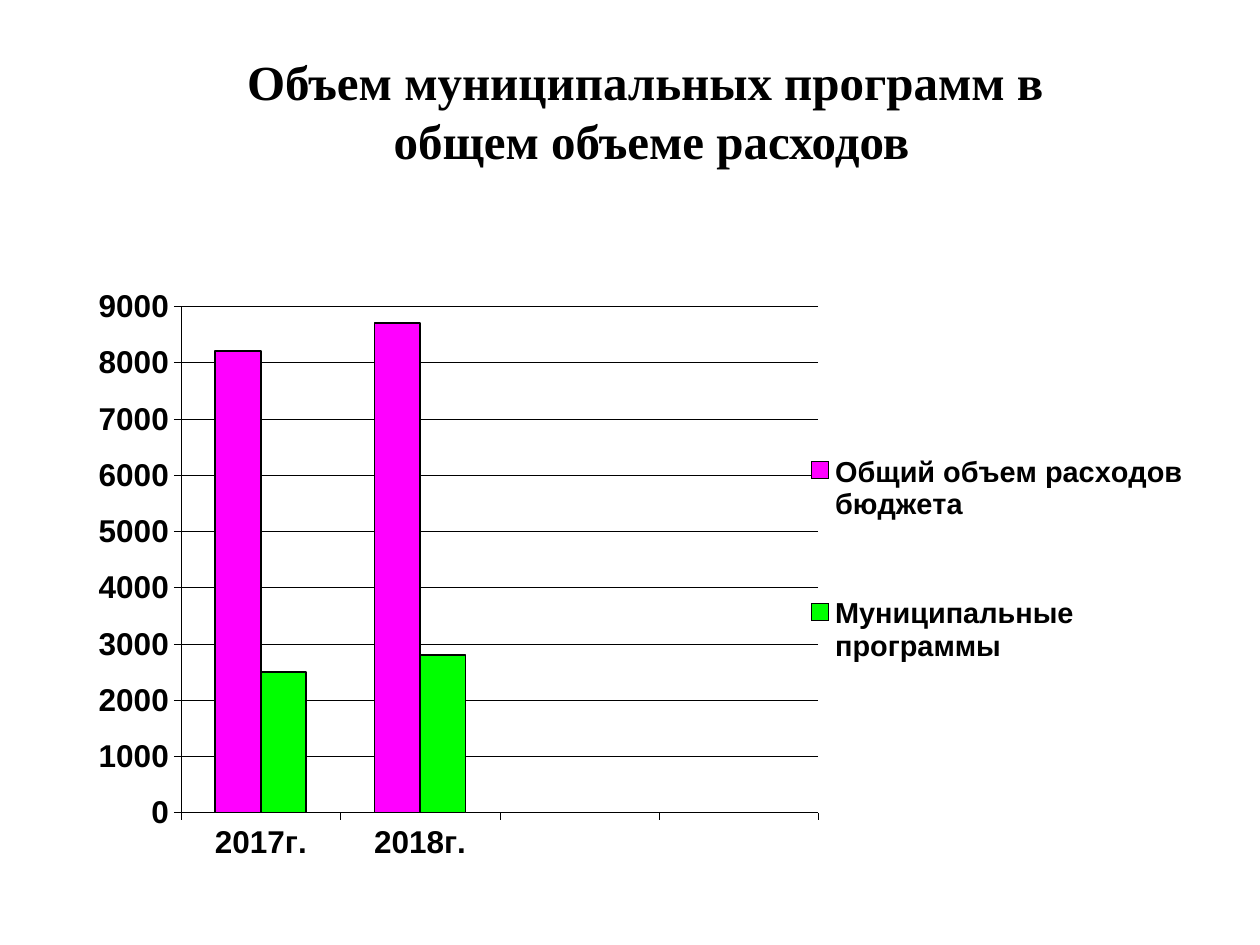
from lxml import etree
from pptx import Presentation
from pptx.chart.data import CategoryChartData
from pptx.dml.color import RGBColor
from pptx.enum.chart import XL_CHART_TYPE as ChartType, XL_LEGEND_POSITION as LegendPos
from pptx.enum.chart import XL_TICK_LABEL_POSITION as LabelPos, XL_TICK_MARK as Tick
from pptx.enum.text import MSO_ANCHOR, PP_ALIGN
from pptx.oxml.ns import qn
from pptx.util import Inches, Pt

COLORS = {"black": "000000", "total": "FF00FF", "programs": "00FF00"}


def set_font(font, name, size):
    for key, value in {"name": name, "size": Pt(size), "bold": True}.items():
        setattr(font, key, value)
    font.color.rgb = RGBColor.from_string(COLORS["black"])


def set_layout(parent, before, **values):
    """Place a chart part by fractions of the chart area."""
    for old in parent.findall(qn("c:layout")):
        parent.remove(old)
    layout = etree.Element(qn("c:layout"))
    manual = etree.SubElement(layout, qn("c:manualLayout"))
    for tag, value in values.items():
        etree.SubElement(manual, qn(f"c:{tag}"), val=str(value))
    before.addprevious(layout)


prs = Presentation()
prs.slide_width, prs.slide_height = Inches(10), Inches(7.5)
s = prs.slides.add_slide(prs.slide_layouts[5])

# Title
title = s.shapes.title
title.left, title.top = Inches(0.67), Inches(0.25)
title.width, title.height = Inches(9), Inches(1.25)
tf = title.text_frame
tf.word_wrap = True
tf.vertical_anchor = MSO_ANCHOR.MIDDLE
tf.text = "Объем муниципальных программ в \nобщем объеме расходов"
for p in tf.paragraphs:
    p.alignment = PP_ALIGN.CENTER
    set_font(p.runs[0].font, "Times New Roman", 28)

# Chart: the last two categories are empty
data = CategoryChartData()
data.categories = ["2017г.", "2018г.", "", ""]
data.add_series("Общий объем расходов бюджета", [8200, 8700, None, None])
data.add_series("Муниципальные программы", [2500, 2800, None, None])
chart = s.shapes.add_chart(ChartType.COLUMN_CLUSTERED, Inches(0.64), Inches(2.19),
                           Inches(8.87), Inches(4.84), data).chart
chart.has_title = False
set_font(chart.font, "Arial", 18)

plot = chart.plots[0]
plot.gap_width, plot.overlap, plot.vary_by_categories = 150, 0, False
for series, color in zip(plot.series, ("total", "programs")):
    series.format.fill.solid()
    series.format.fill.fore_color.rgb = RGBColor.from_string(COLORS[color])
    series.format.line.color.rgb = RGBColor.from_string(COLORS["black"])
    series.format.line.width = Pt(1)

cat_axis, val_axis = chart.category_axis, chart.value_axis
for axis in (cat_axis, val_axis):
    axis.major_tick_mark, axis.minor_tick_mark = Tick.OUTSIDE, Tick.NONE
    set_font(axis.tick_labels.font, "Arial", 18)
cat_axis.tick_label_position = LabelPos.LOW
val_axis.minimum_scale, val_axis.maximum_scale, val_axis.major_unit = 0, 9000, 1000
val_axis.has_major_gridlines = True
for line in (cat_axis.format.line, val_axis.format.line, val_axis.major_gridlines.format.line):
    line.color.rgb = RGBColor.from_string(COLORS["black"])
    line.width = Pt(0.25)

chart.has_legend = True
legend = chart.legend
legend.position, legend.include_in_layout = LegendPos.RIGHT, False
set_font(legend.font, "Arial", 16.5)

area = plot._element.getparent()
set_layout(area, plot._element, layoutTarget="inner", xMode="edge", yMode="edge",
           x=0.09, y=0.05, w=0.57, h=0.83)
set_layout(legend._element, legend._element.find(qn("c:overlay")),
           xMode="edge", yMode="edge", x=0.64, y=0.17, w=0.36, h=0.59)

prs.save("out.pptx")
